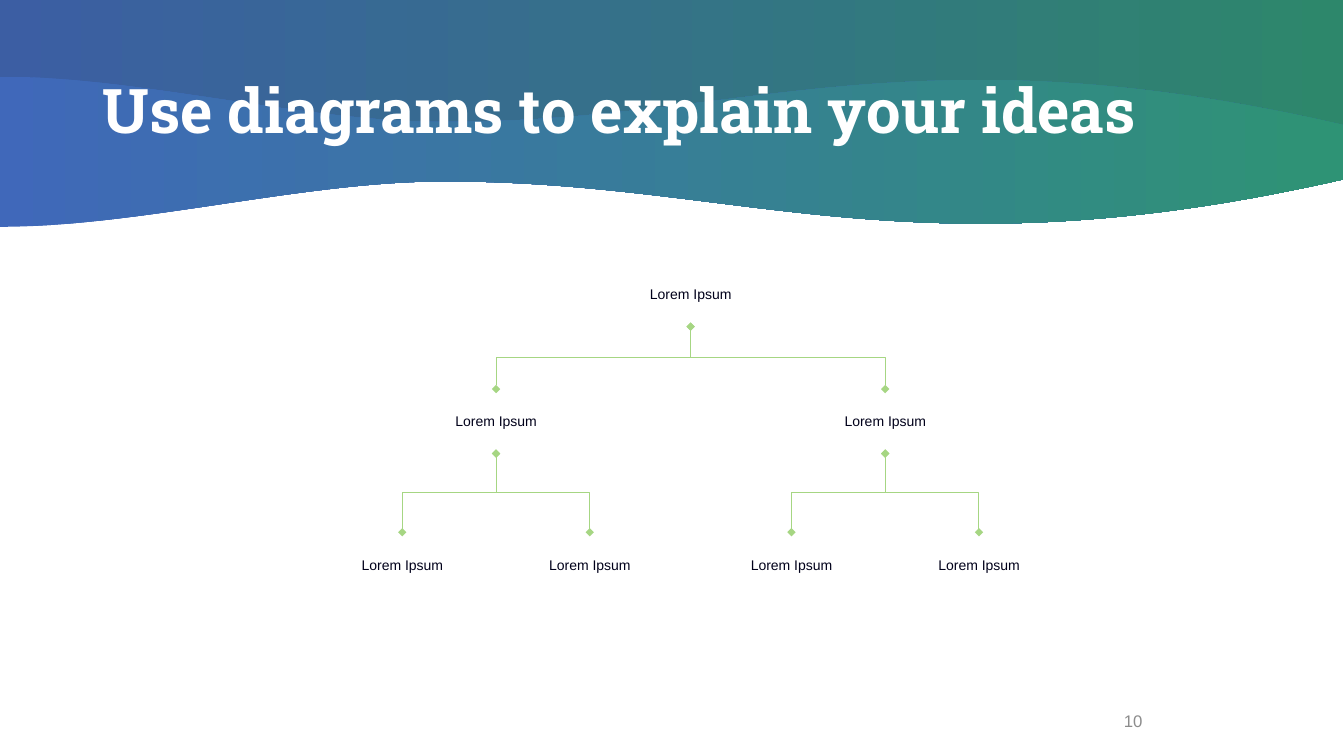
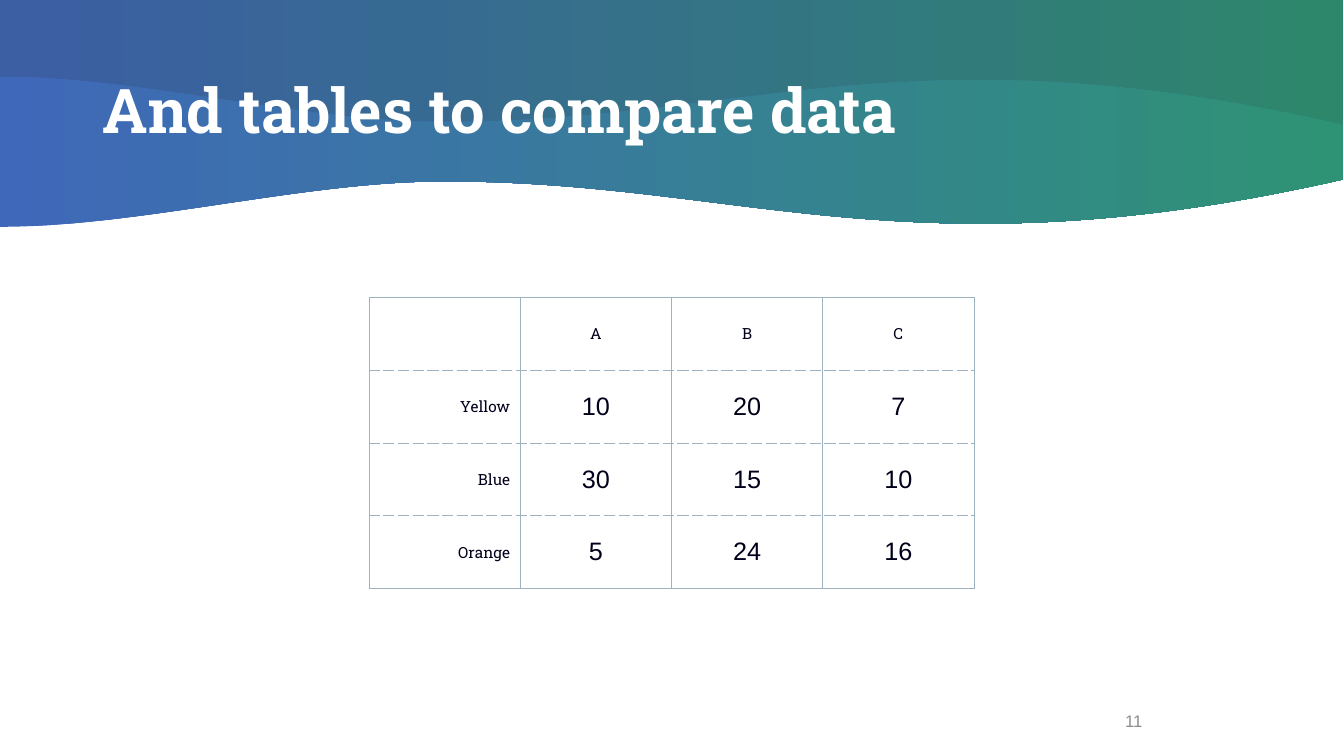
from lxml import etree
from pptx import Presentation
from pptx import util as u
from pptx.dml import color
from pptx.enum import shapes, text
from pptx.oxml import ns

COLORS = {
    "band_start": "1A4294", "band_end": "097252",
    "wave_start": "1F4EAE", "wave_end": "0A815D",
    "white": "FFFFFF", "ink": "00001A", "number": "8C8C8C",
    "branch": "A6D683", "grid": "9EB3C2",
}
HEADING_FONT, BODY_FONT = "Roboto Slab", "Arial"
BAND_WIDTH = 13.32
WAVES = [
    {"start": (0, 0.76),
     "curves": [((1.37, 0.76), (3.02, 1.21), (4.38, 1.21)),
                ((7.36, 1.22), (9.02, 0.25), (BAND_WIDTH, 1.24))],
     "base": 1.51},
    {"start": (0, 2.25),
     "curves": [((1.37, 2.25), (3.02, 1.8), (4.38, 1.8)),
                ((7.36, 1.79), (9.02, 2.76), (BAND_WIDTH, 1.78))],
     "base": 1.5},
]
NODE_WIDTH, NODE_HEIGHT = 1.68, 0.64
LEVEL_TOPS = [2.6, 3.86, 5.28]
BRANCH_SPREADS = [1.93, 0.93]
TABLE_ROWS = [
    ["", "A", "B", "C"],
    ["Yellow", "10", "20", "7"],
    ["Blue", "30", "15", "10"],
    ["Orange", "5", "24", "16"],
]


def rgb(name):
    return color.RGBColor.from_string(COLORS[name])


def add_child(parent, tag, **attributes):
    return etree.SubElement(parent, ns.qn(tag), attributes)


def write(paragraph, words, size, font, ink, align, bold=False):
    paragraph.alignment = align
    run = paragraph.add_run()
    run.text = words
    run.font.size = u.Pt(size)
    run.font.name = font
    run.font.bold = bold
    run.font.color.rgb = rgb(ink)


def add_text(slide, box, words, size, font, ink, align, bold=False, inset=0.05):
    shape = slide.shapes.add_textbox(*map(u.Inches, box))
    frame = shape.text_frame
    frame.word_wrap = True
    frame.vertical_anchor = text.MSO_ANCHOR.MIDDLE
    frame.margin_top = frame.margin_bottom = u.Inches(inset)
    write(frame.paragraphs[0], words, size, font, ink, align, bold)
    return shape


def clear_outline(shape):
    shape.shadow.inherit = False
    shape.line.fill.background()


def fill_gradient(shape, start, end):
    shape.fill.gradient()
    shape.fill.gradient_angle = 0
    for stop, name in zip(shape.fill.gradient_stops, (start, end)):
        stop.color.rgb = rgb(name)


def add_band(slide, height):
    shape = slide.shapes.add_shape(
        shapes.MSO_SHAPE.RECTANGLE, 0, 0, u.Inches(BAND_WIDTH), u.Inches(height))
    clear_outline(shape)
    return shape


def bend(shape, curves):
    segments = shape.element.findall(".//" + ns.qn("a:lnTo"))
    for segment, curve in zip(segments, curves):
        bezier = etree.Element(ns.qn("a:cubicBezTo"))
        for x, y in curve:
            add_child(bezier, "a:pt", x=str(u.Inches(x) - shape.left),
                      y=str(u.Inches(y) - shape.top))
        segment.getparent().replace(segment, bezier)


def add_wave(slide, start, curves, base):
    points = [start, *(curve[-1] for curve in curves), (BAND_WIDTH, base), (0, base)]
    outline = [(u.Inches(x), u.Inches(y)) for x, y in points]
    builder = slide.shapes.build_freeform(*outline[0])
    builder.add_line_segments(outline[1:], close=True)
    shape = builder.convert_to_shape()
    bend(shape, curves)
    clear_outline(shape)
    fill_gradient(shape, "wave_start", "wave_end")


def add_header(slide):
    fill_gradient(add_band(slide, 1.51), "band_start", "band_end")
    for wave in WAVES:
        add_wave(slide, **wave)
    veil = add_band(slide, 2.25)
    veil.fill.solid()
    veil.fill.fore_color.rgb = rgb("white")
    tint = veil.element.spPr.find(".//" + ns.qn("a:srgbClr"))
    add_child(tint, "a:alpha", val="15000")


def share_header(slide):
    layout = slide.slide_layout
    for placeholder in list(layout.placeholders):
        placeholder.element.getparent().remove(placeholder.element)
    add_header(slide)
    for shape in list(slide.shapes):
        layout.element.cSld.spTree.append(shape.element)


def add_slide(presentation, title, number):
    slide = presentation.slides.add_slide(presentation.slide_layouts[6])
    if len(presentation.slides) == 1:
        share_header(slide)
    heading = add_text(slide, (0.92, 0.4, 11.5, 1.45), title, 44, HEADING_FONT,
                       "white", text.PP_ALIGN.LEFT, bold=True)
    heading.text_frame.paragraphs[0].line_spacing = 0.9
    add_text(slide, (10.58, 6.95, 0.85, 0.4), str(number), 12, BODY_FONT,
             "number", text.PP_ALIGN.RIGHT)
    return slide


def add_branch(slide, parent_x, parent_y, child_x, child_y):
    drop, spread = child_y - parent_y, abs(child_x - parent_x)
    middle_x, middle_y = (parent_x + child_x) / 2, (parent_y + child_y) / 2
    reach = -drop / 2 if child_x > parent_x else drop / 2
    corners = (middle_x - reach, middle_y - spread / 2,
               middle_x + reach, middle_y + spread / 2)
    connector = slide.shapes.add_connector(
        shapes.MSO_CONNECTOR.ELBOW, *map(u.Inches, corners))
    properties = connector.element.spPr
    properties.find(ns.qn("a:xfrm")).set("rot", str(270 * 60000))
    connector.line.color.rgb = rgb("branch")
    connector.line.width = u.Pt(0.75)
    line = properties.find(ns.qn("a:ln"))
    for tag in ("a:headEnd", "a:tailEnd"):
        add_child(line, tag, type="diamond")
    add_child(properties, "a:effectLst")


def add_tree(slide, center, level=0):
    top = LEVEL_TOPS[level]
    if level < len(BRANCH_SPREADS):
        for side in (-1, 1):
            child = center + side * BRANCH_SPREADS[level]
            add_branch(slide, center, top + NODE_HEIGHT, child, LEVEL_TOPS[level + 1])
            add_tree(slide, child, level + 1)
    add_text(slide, (center - NODE_WIDTH / 2, top, NODE_WIDTH, NODE_HEIGHT),
             "Lorem Ipsum", 10, BODY_FONT, "ink", text.PP_ALIGN.CENTER, inset=0.1)


def add_border(cell, side, dash):
    line = add_child(cell._tc.get_or_add_tcPr(), "a:ln" + side, w=str(u.Pt(0.75)))
    add_child(add_child(line, "a:solidFill"), "a:srgbClr", val=COLORS["grid"])
    add_child(line, "a:prstDash", val=dash)


def style_cell(cell, words, row, column, last_row):
    cell.vertical_anchor = text.MSO_ANCHOR.MIDDLE
    cell.margin_left = cell.margin_right = u.Inches(0.1)
    cell.margin_top = cell.margin_bottom = u.Inches(0.07)
    dashes = {"L": "solid", "R": "solid",
              "T": "solid" if row == 0 else "lgDash",
              "B": "solid" if row == last_row else "lgDash"}
    for side, dash in dashes.items():
        add_border(cell, side, dash)
    cell.fill.background()
    if words:
        size, font = (18, BODY_FONT) if row and column else (11, HEADING_FONT)
        align = text.PP_ALIGN.CENTER if column else text.PP_ALIGN.RIGHT
        write(cell.text_frame.paragraphs[0], words, size, font, "ink", align)


def add_grid(slide, rows, box):
    table = slide.shapes.add_table(
        len(rows), len(rows[0]), *map(u.Inches, box)).table
    table.first_row = table.horz_banding = False
    for row, values in enumerate(rows):
        for column, words in enumerate(values):
            style_cell(table.cell(row, column), words, row, column, len(rows) - 1)


def main():
    presentation = Presentation()
    presentation.slide_width = u.Inches(13.33)
    presentation.slide_height = u.Inches(7.5)
    diagram = add_slide(presentation, "Use diagrams to explain your ideas", 10)
    add_tree(diagram, 6.85)
    comparison = add_slide(presentation, "And tables to compare data", 11)
    add_grid(comparison, TABLE_ROWS, (3.66, 2.95, 6, 2.89))
    presentation.save("out.pptx")


if __name__ == "__main__":
    main()
